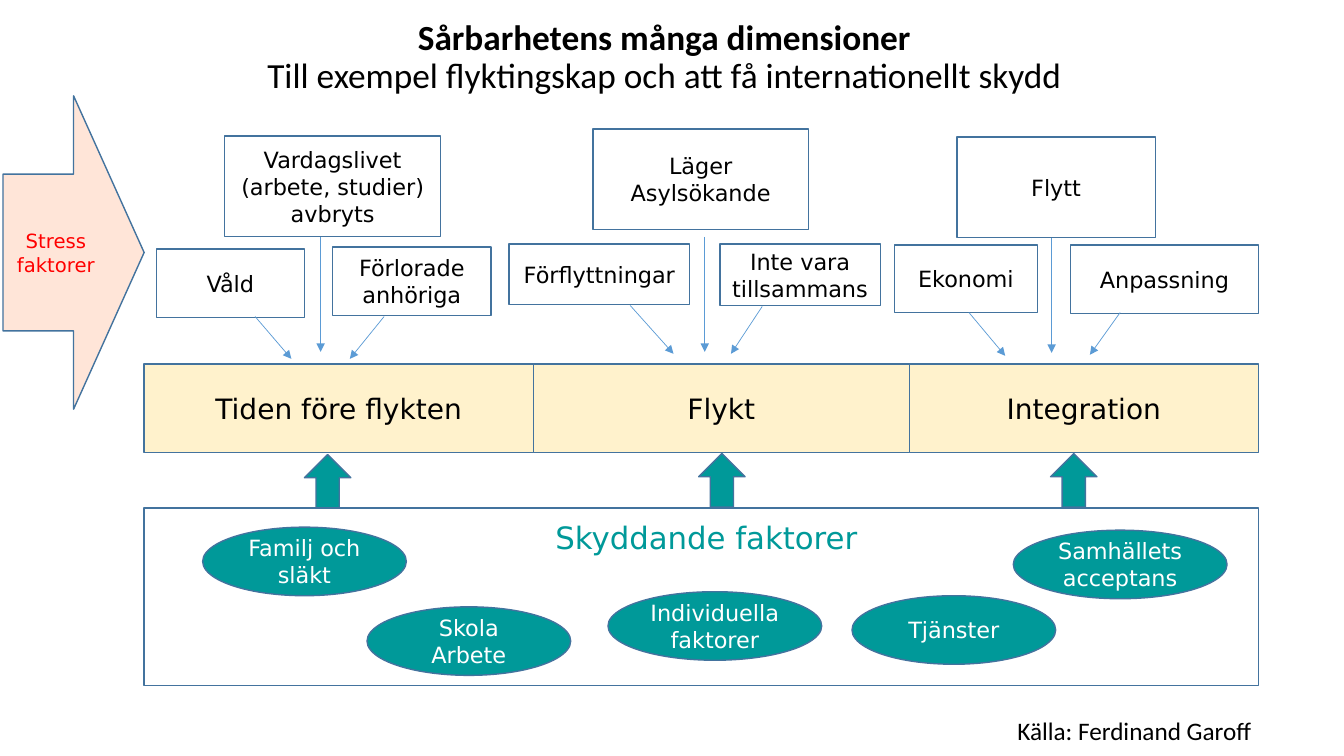
import pptx
import pptx.util
import pptx.dml.color
import pptx.enum.shapes
import pptx.enum.text
import pptx.oxml
import pptx.oxml.ns
from dataclasses import dataclass

Inches = pptx.util.Inches
SHAPE = pptx.enum.shapes.MSO_SHAPE
ALIGN = pptx.enum.text.PP_ALIGN
ANCHOR = pptx.enum.text.MSO_ANCHOR

# Content: boxes are (left, top, width, height) and arrows (x1, y1, x2, y2), in inches
TITLE = ["Sårbarhetens många dimensioner",
         "Till exempel flyktingskap och att få internationellt skydd"]
STRESS = (["Stress", "faktorer"], (0.03, 0.95, 1.4, 3.11))
PROTECTION = (["Skyddande faktorer"], (1.43, 5.04, 11.05, 1.76))
CREDIT = (["Källa: Ferdinand Garoff"], (8.73, 7.0, 4.39, 0.49))

PHASES = [
    {"name": "Tiden före flykten", "width": 3.86, "support": (3.02, 4.51),
     "stressors": [(["Vardagslivet", "(arbete, studier) avbryts"], (2.23, 1.35, 2.14, 1)),
                   (["Våld"], (1.55, 2.47, 1.47, 0.68)),
                   (["Förlorade anhöriga"], (3.3, 2.45, 1.57, 0.68))],
     "arrows": [(2.53, 3.14, 2.89, 3.56), (3.18, 2.35, 3.18, 3.49), (3.81, 3.14, 3.47, 3.56)]},
    {"name": "Flykt", "width": 3.73, "support": (6.93, 4.5),
     "stressors": [(["Läger", "Asylsökande"], (5.88, 1.28, 2.14, 1)),
                   (["Förflyttningar"], (5.05, 2.42, 1.79, 0.6)),
                   (["Inte vara tillsammans"], (7.14, 2.42, 1.59, 0.61))],
     "arrows": [(6.25, 3.03, 6.68, 3.51), (6.99, 2.35, 6.99, 3.49), (7.56, 3.04, 7.25, 3.51)]},
    {"name": "Integration", "width": 3.46, "support": (10.42, 4.5),
     "stressors": [(["Flytt"], (9.49, 1.36, 1.97, 1)),
                   (["Ekonomi"], (8.87, 2.43, 1.42, 0.67)),
                   (["Anpassning"], (10.62, 2.43, 1.86, 0.68))],
     "arrows": [(9.61, 3.1, 9.97, 3.53), (10.43, 2.36, 10.43, 3.5), (11.11, 3.1, 10.81, 3.52)]},
]
PHASE_LEFT, PHASE_TOP, PHASE_HEIGHT = 1.43, 3.61, 0.88
SUPPORT_SIZE = (0.46, 0.53)

FACTORS = [
    (["Familj och släkt"], (2.01, 5.23, 2.02, 0.68)),
    (["Individuella faktorer"], (6.03, 5.87, 2.12, 0.68)),
    (["Skola", "Arbete"], (3.64, 6.02, 2.02, 0.68)),
    (["Tjänster"], (8.45, 5.91, 2.02, 0.68)),
    (["Samhällets acceptans"], (10.05, 5.26, 2.12, 0.68)),
]


@dataclass(frozen=True)
class Theme:
    heading_font: str = "Calibri"
    label_font: str = "DejaVu Sans"
    black: str = "000000"
    white: str = "FFFFFF"
    red: str = "FF0000"
    teal: str = "009999"
    cream: str = "FFF2CC"
    orange: str = "FF9966"
    outline: str = "43739E"
    arrow: str = "5B9BD5"
    title_size: float = 25.2
    panel_size: float = 22
    phase_size: float = 20
    credit_size: float = 18
    label_size: float = 16
    stress_size: float = 14


theme = Theme()


def rgb(value):
    return pptx.dml.color.RGBColor.from_string(value)


def add_span(para, text, size, color, font):
    span = para.add_run()
    span.text = text
    span.font.size = pptx.util.Pt(size)
    span.font.name = font
    span.font.color.rgb = rgb(color)
    return span


def add_box(page, kind, place, fill=None, line=theme.outline, lines=(),
            size=theme.label_size, color=theme.black, font=theme.label_font,
            align=ALIGN.CENTER, anchor=ANCHOR.MIDDLE):
    box = page.shapes.add_shape(kind, *map(Inches, place))
    box.shadow.inherit = False
    if fill:
        box.fill.solid()
        box.fill.fore_color.rgb = rgb(fill)
    else:
        box.fill.background()
    if line:
        box.line.color.rgb = rgb(line)
        box.line.width = pptx.util.Pt(1)
    else:
        box.line.fill.background()
    frame = box.text_frame
    frame.word_wrap = True
    frame.vertical_anchor = anchor
    for number, text in enumerate(lines):
        para = frame.add_paragraph() if number else frame.paragraphs[0]
        para.alignment = align
        add_span(para, text, size, color, font)
    return box


def add_arrow(page, ends):
    arrow = page.shapes.add_connector(
        pptx.enum.shapes.MSO_CONNECTOR.STRAIGHT, *map(Inches, ends))
    arrow.line.color.rgb = rgb(theme.arrow)
    arrow.line.width = pptx.util.Pt(0.5)
    head = pptx.oxml.ns.qn("a:tailEnd")
    arrow.line._get_or_add_ln().makeelement(head)
    arrow.line._get_or_add_ln().append(pptx.oxml.parse_xml(
        '<a:tailEnd xmlns:a="http://schemas.openxmlformats.org/drawingml/2006/main"'
        ' type="triangle"/>')) 
    arrow._element.spPr.append(arrow._element.makeelement(pptx.oxml.ns.qn("a:effectLst")))


def add_title(page):
    title = page.shapes.title
    title.left, title.top, title.width, title.height = map(Inches, (0.84, 0.14, 11.5, 0.88))
    title.text_frame.word_wrap = True
    title.text_frame.vertical_anchor = ANCHOR.MIDDLE
    para = title.text_frame.paragraphs[0]
    para.alignment = ALIGN.CENTER
    para.line_spacing = 0.9
    for number, text in enumerate(TITLE):
        if number:
            para.add_line_break()
        span = add_span(para, text, theme.title_size, theme.black, theme.heading_font)
        span.font.bold = number == 0


def main():
    deck = pptx.Presentation()
    deck.slide_width, deck.slide_height = Inches(13.33), Inches(7.5)
    page = deck.slides.add_slide(deck.slide_layouts[5])
    add_title(page)

    # Stress arrow, a quarter opaque
    lines, place = STRESS
    stress = add_box(page, SHAPE.RIGHT_ARROW, place, theme.orange, lines=lines,
                     size=theme.stress_size, color=theme.red)
    tint = stress._element.spPr.find(".//" + pptx.oxml.ns.qn("a:srgbClr"))
    tint.append(tint.makeelement(pptx.oxml.ns.qn("a:alpha"), {"val": "25000"}))

    # Phases side by side, with stressors above and support arrows below
    left = PHASE_LEFT
    for phase in PHASES:
        for lines, place in phase["stressors"]:
            add_box(page, SHAPE.RECTANGLE, place, theme.white, lines=lines)
        add_box(page, SHAPE.RECTANGLE, (left, PHASE_TOP, phase["width"], PHASE_HEIGHT),
                theme.cream, lines=[phase["name"]], size=theme.phase_size)
        for ends in phase["arrows"]:
            add_arrow(page, ends)
        add_box(page, SHAPE.UP_ARROW, phase["support"] + SUPPORT_SIZE, theme.teal)
        left += phase["width"]

    # Protective factors
    lines, place = PROTECTION
    panel = add_box(page, SHAPE.RECTANGLE, place, lines=lines, size=theme.panel_size,
                    color=theme.teal, anchor=ANCHOR.TOP)
    panel.text_frame.margin_top = Inches(0.11)
    panel.text_frame.margin_left = Inches(0.2)
    for lines, place in FACTORS:
        add_box(page, SHAPE.OVAL, place, theme.teal, lines=lines, color=theme.white)

    # Credit
    lines, place = CREDIT
    credit = add_box(page, SHAPE.RECTANGLE, place, theme.white, None, lines,
                     theme.credit_size, font=theme.heading_font, align=ALIGN.RIGHT)
    credit.text_frame.margin_right = Inches(0.71)

    deck.save("out.pptx")


if __name__ == "__main__":
    main()
